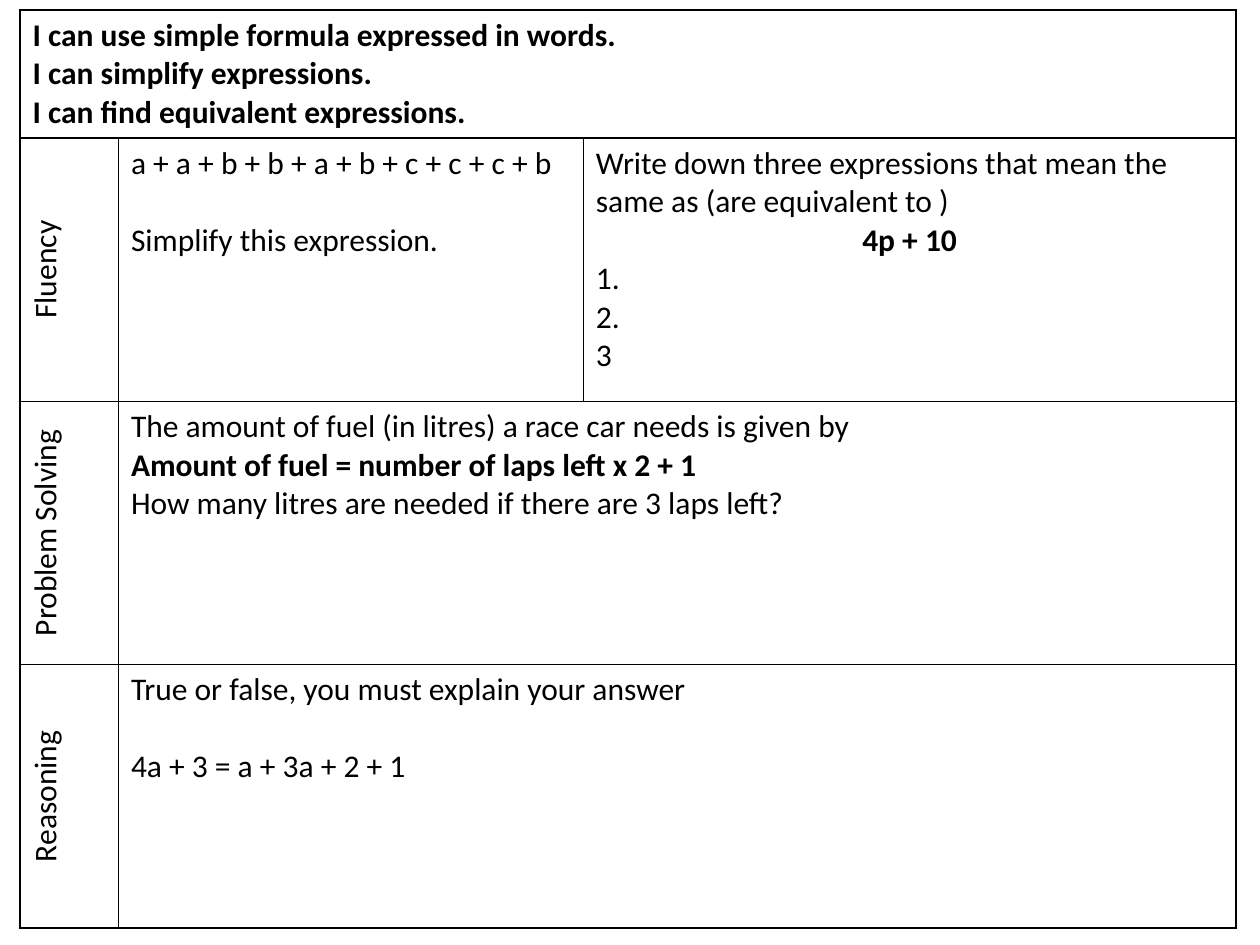
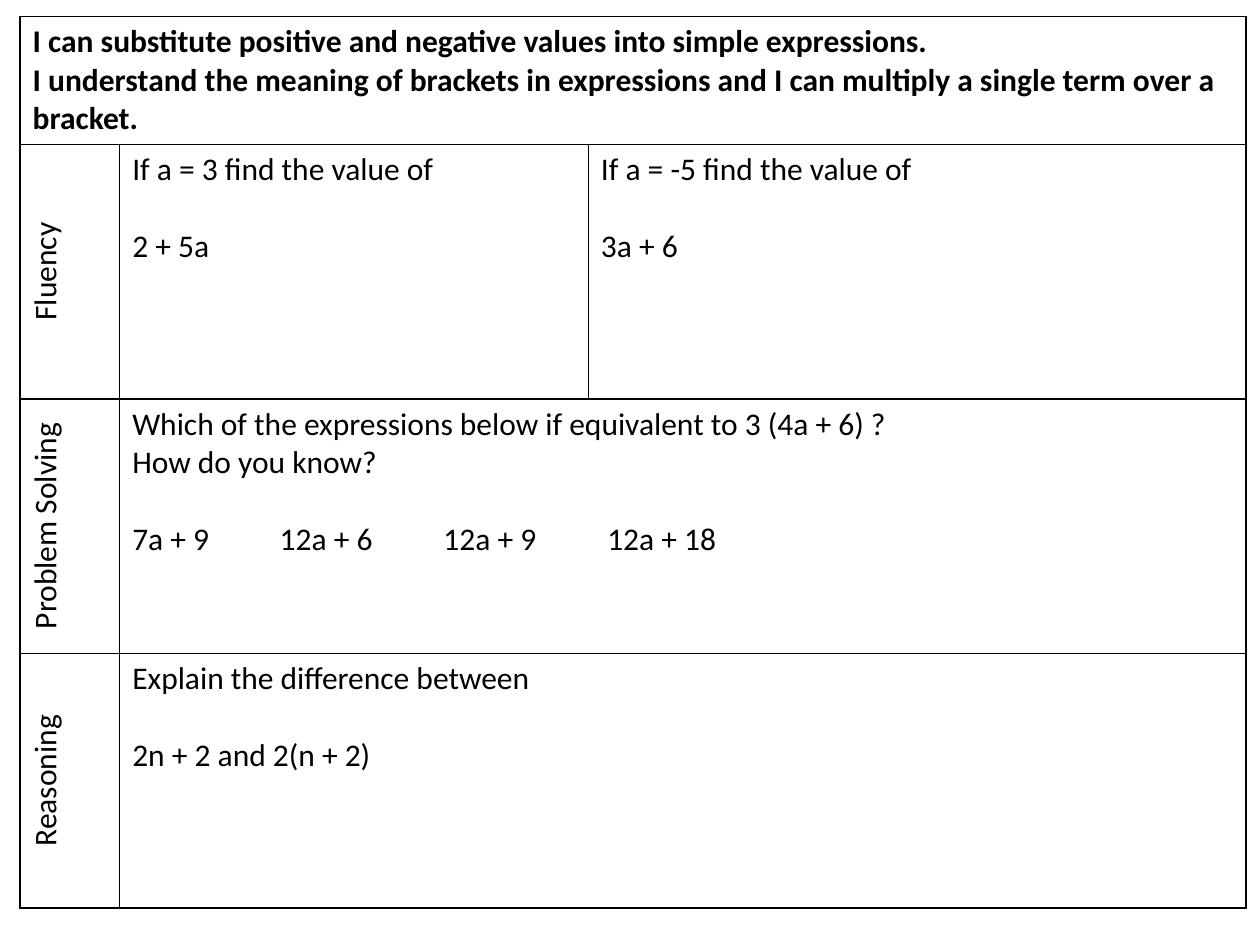
from dataclasses import dataclass

from lxml.etree import SubElement
from pptx import Presentation
from pptx.dml.color import RGBColor
from pptx.enum.text import PP_ALIGN
from pptx.oxml import parse_xml
from pptx.oxml.ns import nsdecls, qn
from pptx.presentation import Presentation as Deck
from pptx.table import _Cell as Cell
from pptx.util import Inches, Pt

COLORS = {"ink": "000000", "page": "FFFFFF"}
FONT = "Calibri"
TEXT_SIZE = Pt(18)
BLANK_LINE = Pt(22)
BORDER = Pt(1)
GOAL_HEIGHT = 0.94
LABELS = ("Fluency", "Problem Solving", "Reasoning")
FIRST_TAB, TAB_STEP = 1.17, 1.3


@dataclass(frozen=True)
class Line:
    text: str
    bold: bool = False
    centered: bool = False
    gap: bool = False


@dataclass(frozen=True)
class Worksheet:
    left: float
    top: float
    columns: tuple[float, ...]
    task_height: float
    goals: tuple[str, ...]
    fluency: tuple[Line, ...]
    fluency_extra: tuple[Line, ...]
    problem: tuple[Line, ...]
    reasoning: tuple[Line, ...]


WORKSHEETS = (
    Worksheet(
        0.16, 0.08, (0.78, 3.69, 5.18), 2.09,
        goals=(
            "I can use simple formula expressed in words.",
            "I can simplify expressions.",
            "I can find equivalent expressions.",
        ),
        fluency=(
            Line("a + a + b + b + a + b + c + c + c + b"),
            Line("Simplify this expression.", gap=True),
        ),
        fluency_extra=(
            Line("Write down three expressions that mean the same as (are equivalent to )"),
            Line("4p + 10", bold=True, centered=True),
            Line("1."),
            Line("2."),
            Line("3"),
        ),
        problem=(
            Line("The amount of fuel (in litres) a race car needs is given by"),
            Line("Amount of fuel = number of laps left x 2 + 1", bold=True),
            Line("How many litres are needed if there are 3 laps left?"),
        ),
        reasoning=(
            Line("True or false, you must explain your answer"),
            Line("4a + 3 = a + 3a + 2 + 1", gap=True),
        ),
    ),
    Worksheet(
        0.16, 0.13, (0.79, 3.72, 5.22), 2.02,
        goals=(
            "I can substitute positive and negative values into simple expressions.",
            "I understand the meaning of brackets in expressions and I can multiply "
            "a single term over a bracket.",
        ),
        fluency=(
            Line("If a = 3 find the value of"),
            Line("2 + 5a", gap=True),
        ),
        fluency_extra=(
            Line("If a = -5 find the value of"),
            Line("3a + 6", gap=True),
        ),
        problem=(
            Line("Which of the expressions below if equivalent to 3 (4a + 6) ?"),
            Line("How do you know?"),
            Line("7a + 9\t12a + 6\t12a + 9\t12a + 18", gap=True),
        ),
        reasoning=(
            Line("Explain the difference between"),
            Line("2n + 2 and 2(n + 2)", gap=True),
        ),
    ),
)


def style_cell(cell: Cell) -> None:
    cell.fill.solid()
    cell.fill.fore_color.rgb = RGBColor.from_string(COLORS["page"])
    tc_pr = cell._tc.get_or_add_tcPr()
    for i, side in enumerate(("lnL", "lnR", "lnT", "lnB")):
        tc_pr.insert(i, parse_xml(
            f'<a:{side} {nsdecls("a")} w="{int(BORDER)}"><a:solidFill>'
            f'<a:srgbClr val="{COLORS["ink"]}"/></a:solidFill></a:{side}>'
        ))


def write_lines(cell: Cell, lines: tuple[Line, ...]) -> None:
    tf = cell.text_frame
    for i, line in enumerate(lines):
        p = tf.add_paragraph() if i else tf.paragraphs[0]
        if line.centered:
            p.alignment = PP_ALIGN.CENTER
        if line.gap:
            p.space_before = BLANK_LINE
        tabs = line.text.count("\t")
        if tabs:
            tab_list = SubElement(p._p.get_or_add_pPr(), qn("a:tabLst"))
            for n in range(tabs):
                position = Inches(FIRST_TAB + n * TAB_STEP)
                SubElement(tab_list, qn("a:tab"), pos=str(int(position)), algn="l")
        r = p.add_run()
        r.text = line.text
        r.font.name = FONT
        r.font.size = TEXT_SIZE
        r.font.bold = line.bold
        r.font.color.rgb = RGBColor.from_string(COLORS["ink"])


def add_worksheet(prs: Deck, sheet: Worksheet) -> None:
    s = prs.slides.add_slide(prs.slide_layouts[6])
    heights = (GOAL_HEIGHT,) + (sheet.task_height,) * len(LABELS)
    table = s.shapes.add_table(
        len(heights), len(sheet.columns), Inches(sheet.left), Inches(sheet.top),
        Inches(sum(sheet.columns)), Inches(sum(heights)),
    ).table
    table.first_row = False
    table.horz_banding = False
    for column, width in zip(table.columns, sheet.columns):
        column.width = Inches(width)
    for row, height in zip(table.rows, heights):
        row.height = Inches(height)
    for cell in table.iter_cells():
        style_cell(cell)

    table.cell(0, 0).merge(table.cell(0, 2))
    for row in (2, 3):
        table.cell(row, 1).merge(table.cell(row, 2))

    write_lines(table.cell(0, 0), tuple(Line(goal, bold=True) for goal in sheet.goals))
    for row, label in enumerate(LABELS, start=1):
        cell = table.cell(row, 0)
        cell._tc.get_or_add_tcPr().set("vert", "vert270")
        write_lines(cell, (Line(label, centered=True),))
    for row, task in enumerate((sheet.fluency, sheet.problem, sheet.reasoning), start=1):
        write_lines(table.cell(row, 1), task)
    write_lines(table.cell(1, 2), sheet.fluency_extra)


def main() -> None:
    prs = Presentation()
    prs.slide_width = Inches(10)
    prs.slide_height = Inches(7.5)
    for sheet in WORKSHEETS:
        add_worksheet(prs, sheet)
    prs.save("out.pptx")


if __name__ == "__main__":
    main()
